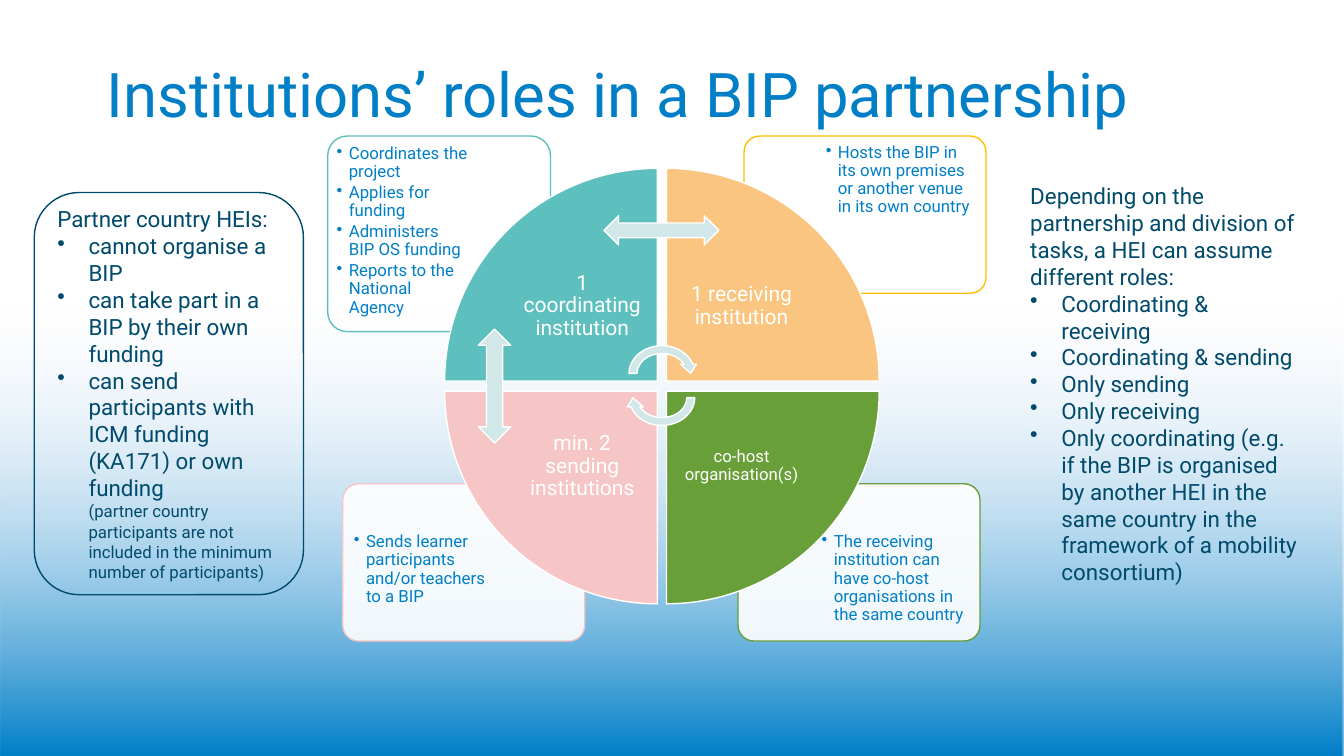
from lxml.etree import SubElement
from pptx import Presentation
from pptx.dml.color import RGBColor
from pptx.enum.shapes import MSO_SHAPE
from pptx.enum.text import MSO_ANCHOR, PP_ALIGN
from pptx.oxml.ns import qn
from pptx.util import Emu, Pt

PX = 9144  # 100 px to the inch
WIDTH, HEIGHT = 1333, 750
FONT = "Roboto"
WHITE = RGBColor(0xFF, 0xFF, 0xFF)
HAZE = RGBColor(0xF7, 0xF5, 0xFC)
BLUE = RGBColor(0x00, 0x7F, 0xC7)
NAVY = RGBColor(0x00, 0x4A, 0x6C)
TEAL = RGBColor(0x5D, 0xBF, 0xBE)
ORANGE = RGBColor(0xF9, 0xC5, 0x81)
YELLOW = RGBColor(0xFF, 0xC0, 0x00)
GREEN = RGBColor(0x68, 0x9F, 0x38)
PINK = RGBColor(0xF6, 0xC5, 0xC5)
MINT = RGBColor(0xD2, 0xE8, 0xE8)

presentation = Presentation()
presentation.slide_width = Emu(WIDTH * PX)
presentation.slide_height = Emu(HEIGHT * PX)
slide = presentation.slides.add_slide(presentation.slide_layouts[6])


def add_shape(kind, box, fill=None, line=None, rotation=0):
    shape = slide.shapes.add_shape(kind, *[Emu(value * PX) for value in box])
    shape.shadow.inherit = False
    shape.rotation = rotation
    if fill is None:
        shape.fill.background()
    else:
        shape.fill.solid()
        shape.fill.fore_color.rgb = fill
    if line is None:
        shape.line.fill.background()
    else:
        shape.line.color.rgb = line
        shape.line.width = Pt(1)
    return shape


def write_text(shape, texts, size, color, inset=None, anchor=MSO_ANCHOR.TOP,
               bullets_from=None, indent=0, **formats):
    frame = shape.text_frame
    frame.word_wrap = True
    frame.vertical_anchor = anchor
    if inset is not None:
        for side in ("left", "top", "right", "bottom"):
            setattr(frame, f"margin_{side}", Emu(inset * PX))
    for index, text in enumerate(texts):
        paragraph = frame.add_paragraph() if index else frame.paragraphs[0]
        paragraph.text = text
        if bullets_from is not None and index >= bullets_from:
            properties = paragraph._p.get_or_add_pPr()
            properties.set("marL", str(indent * PX))
            properties.set("indent", str(-indent * PX))
            SubElement(properties, qn("a:buChar"), char="•")
        for name, value in ({"alignment": PP_ALIGN.LEFT} | formats).items():
            setattr(paragraph, name, value)
        for line_break in paragraph._p.findall(qn("a:br")):
            SubElement(line_break, qn("a:rPr"), sz=str(size * 100))
        for run in paragraph.runs:
            run.font.name = FONT
            run.font.size = Pt(size)
            run.font.color.rgb = color
    return frame


# Background fading from clear to blue
background = add_shape(MSO_SHAPE.RECTANGLE, (0, 0, WIDTH, HEIGHT))
background.fill.gradient()
background.fill.gradient_angle = 270
for stop, color, position in zip(background.fill.gradient_stops, (HAZE, BLUE), (0.38, 1)):
    stop.color.rgb = color
    stop.position = position
first_color = next(background._element.spPr.iter(qn("a:srgbClr")))
SubElement(first_color, qn("a:alpha"), val="0")

# Title
title = add_shape(MSO_SHAPE.RECTANGLE, (96, 14, 1142, 121))
write_text(title, ["Institutions’ roles in a BIP partnership"], 44, BLUE,
           anchor=MSO_ANCHOR.BOTTOM, line_spacing=0.9)

# Role cards: card box, outline, text box, inset, bullets
cards = [
    ((732, 480, 240, 156), GREEN, (808, 522, 161, 110), 7,
     ["The receiving institution can have co-host organisations in the same country"]),
    ((340, 480, 240, 156), PINK, (344, 522, 161, 110), 7,
     ["Sends learner participants and/or teachers to a BIP"]),
    ((738, 135, 240, 156), YELLOW, (814, 138, 161, 110), 5,
     ["Hosts the BIP in its own premises or another venue in its own country"]),
    ((325, 135, 221, 194), TEAL, (329, 139, 146, 137), 5,
     ["Coordinates the project", "Applies for funding",
      "Administers\nBIP OS funding", "Reports to the National\nAgency"]),
]
for card_box, outline, text_box, inset, texts in cards:
    card = add_shape(MSO_SHAPE.ROUNDED_RECTANGLE, card_box, WHITE, outline)
    card.adjustments[0] = 0.1
    card_color = next(card._element.spPr.iter(qn("a:srgbClr")))
    SubElement(card_color, qn("a:alpha"), val="90000")
    label = add_shape(MSO_SHAPE.RECTANGLE, text_box)
    write_text(label, texts, 12, BLUE, inset, bullets_from=0, indent=12,
               line_spacing=0.9, space_after=Pt(2))

# Quarter wedges, clockwise from top left: column, row, colour, label, size, inset
wedges = [
    (0, 0, TEAL, "1 coordinating institution", 15, 12),
    (1, 0, ORANGE, "1 receiving institution", 15, 12),
    (1, 1, GREEN, "co-host organisation(s)", 12, 9),
    (0, 1, PINK, "min. 2 sending institutions", 15, 12),
]
for turn, (column, row, color, text, size, inset) in enumerate(wedges):
    add_shape(MSO_SHAPE.PIE_WEDGE, (441 + 220 * column, 167 + 221 * row, 211, 211),
              color, WHITE, 90 * turn)
    label = add_shape(MSO_SHAPE.RECTANGLE,
                      (503 + 158 * column, 229 + 159 * row, 149, 149))
    write_text(label, [text], size, WHITE, inset, MSO_ANCHOR.MIDDLE,
               alignment=PP_ALIGN.CENTER, line_spacing=0.9)

# Circular arrows in the centre
for top, rotation in ((339, 0), (363, 180)):
    add_shape(MSO_SHAPE.CIRCULAR_ARROW, (620, top, 73, 63), MINT, WHITE, rotation)

# Possible role combinations
combinations = add_shape(MSO_SHAPE.RECTANGLE, (1012, 176, 287, 414))
write_text(combinations, [
    "Depending on the partnership and division of tasks, a HEI can assume different roles:",
    "Coordinating & receiving",
    "Coordinating & sending",
    "Only sending",
    "Only receiving",
    "Only coordinating (e.g. if the BIP is organised by another HEI in the same country "
    "in the framework of a mobility consortium)",
], 16, NAVY, bullets_from=1, indent=31)

# Partner country panel
partners = add_shape(MSO_SHAPE.ROUNDED_RECTANGLE, (34, 191, 267, 399), line=NAVY)
partner_frame = write_text(partners, [
    "Partner country HEIs:",
    "cannot organise a BIP",
    "can take part in a BIP by their own funding",
    "can send participants with ICM funding (KA171) or own funding\n"
    "(partner country participants are not included in the minimum number of participants)",
], 16, NAVY, anchor=MSO_ANCHOR.MIDDLE, bullets_from=1, indent=31)
partner_frame.paragraphs[-1].runs[-1].font.size = Pt(12)

# Double arrows between neighbouring wedges
for box, rotation in (((599, 214, 114, 29), 0), ((434, 367, 113, 32), 270)):
    add_shape(MSO_SHAPE.LEFT_RIGHT_ARROW, box, MINT, WHITE, rotation)

presentation.save("out.pptx")
